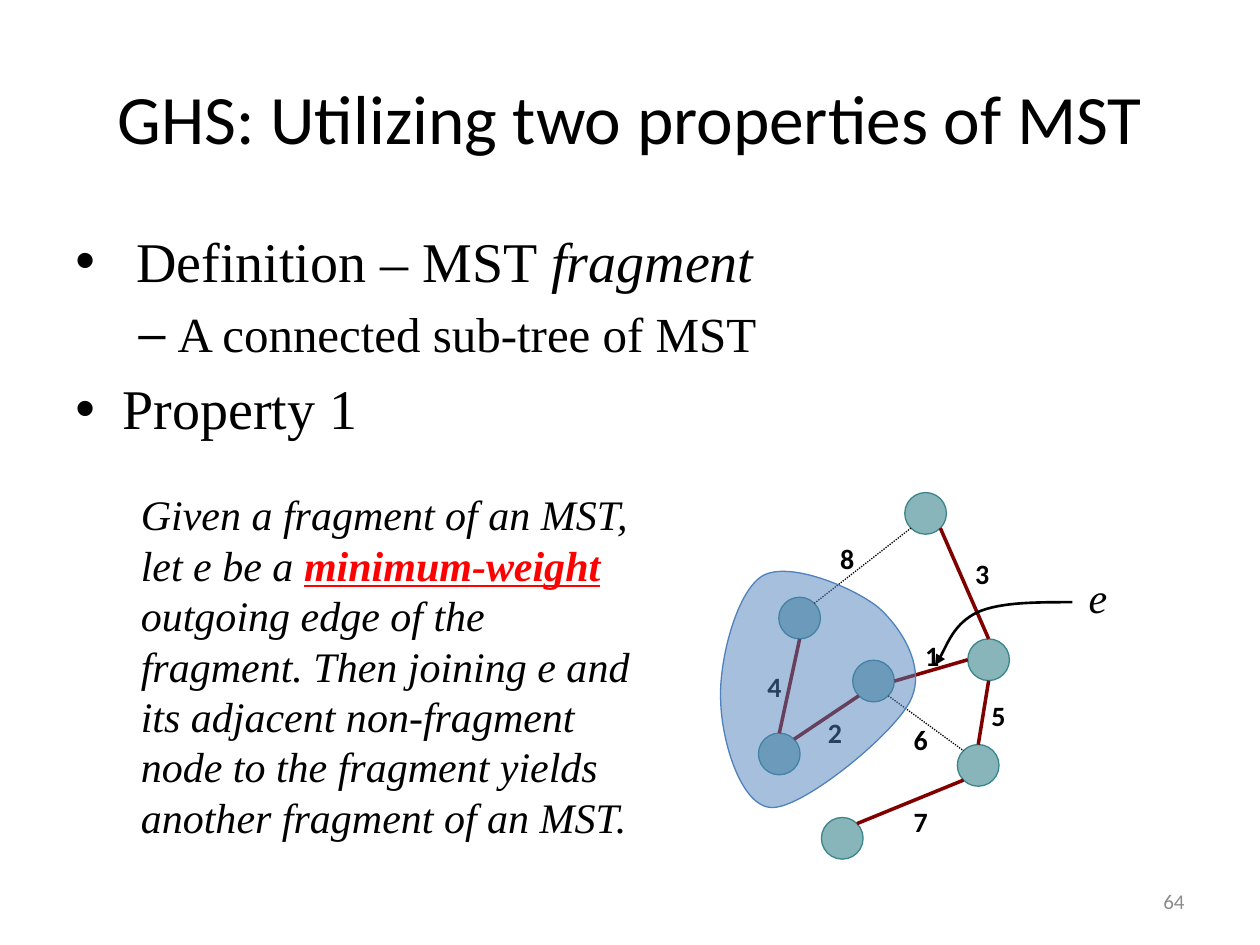
"""Build the slide on minimum spanning tree fragments and their first property."""
from math import cos, radians, sin

from lxml.etree import SubElement
from pptx import Presentation
from pptx.dml.color import RGBColor
from pptx.enum.dml import MSO_LINE
from pptx.enum.shapes import MSO_CONNECTOR, MSO_SHAPE
from pptx.enum.text import MSO_ANCHOR as ANCHOR, PP_ALIGN as ALIGN
from pptx.oxml.ns import qn
from pptx.util import Cm, Pt

rgb = RGBColor.from_string
SERIF, SANS = "Times New Roman", "Calibri"

deck = Presentation()
deck.slide_width, deck.slide_height = Cm(25.4), Cm(19.05)
slide = deck.slides.add_slide(deck.slide_layouts[5])
shapes = slide.shapes


def write(frame, runs, size, font, color="000000", align=ALIGN.LEFT, new=False):
    paragraph = frame.add_paragraph() if new else frame.paragraphs[0]
    paragraph.alignment = align
    paragraph.font.size, paragraph.font.name = Pt(size), font
    paragraph.font.color.rgb = rgb(color)
    for words in runs:
        paragraph.add_run().text = words
    return paragraph


def add_curve(points, closed):
    (left, top), *rest = [(Cm(x), Cm(y)) for x, y in points]
    builder = shapes.build_freeform(left, top)
    builder.add_line_segments(rest, close=closed)
    curve = builder.convert_to_shape()
    curve.shadow.inherit = False
    steps = list(curve._element.iter(qn("a:lnTo")))
    for first, second, third in zip(steps[::3], steps[1::3], steps[2::3]):
        bezier = SubElement(first.getparent(), qn("a:cubicBezTo"))
        first.addprevious(bezier)
        for step in (first, second, third):
            bezier.append(step[0])
            step.getparent().remove(step)
    return curve


title = shapes.title
title.left, title.top, title.width, title.height = Cm(1.27), Cm(0.76), Cm(22.86), Cm(3.18)
title.text_frame.vertical_anchor = ANCHOR.MIDDLE
write(title.text_frame, ["GHS: Utilizing two properties of MST"], 39.6, SANS, align=ALIGN.CENTER)

outline_text = shapes.add_textbox(Cm(1.27), Cm(4.45), Cm(22.86), Cm(12.57)).text_frame
outline_text.word_wrap = True
points = [
    ([" Definition – MST ", "fragment"], 0, 32, "•", 0.95, 0.95),
    (["A connected sub-tree of MST"], 1, 28, "–", 2.06, 0.79),
    (["Property 1"], 0, 32, "•", 0.95, 0.95),
]
for number, (runs, level, size, bullet, margin, hang) in enumerate(points):
    point = write(outline_text, runs, size, SERIF, new=number > 0)
    point.level, point.space_before = level, Pt(size * 0.2)
    properties = point._p.get_or_add_pPr()
    properties.set("marL", str(Cm(margin)))
    properties.set("indent", str(-Cm(hang)))
    bullet_font = SubElement(properties, qn("a:buFont"), typeface="Arial")
    bullet_char = SubElement(properties, qn("a:buChar"), char=bullet)
    properties.find(qn("a:defRPr")).addprevious(bullet_font)
    properties.find(qn("a:defRPr")).addprevious(bullet_char)
outline_text.paragraphs[0].runs[1].font.italic = True

property_text = shapes.add_textbox(Cm(2.59), Cm(9.73), Cm(10.92), Cm(7.44)).text_frame
property_text.word_wrap, property_text.margin_right = True, Cm(0.6)
statement = write(property_text, [
    "Given a fragment of an MST, let e be a ", "minimum-weight",
    " outgoing edge of the fragment. Then joining e and its adjacent non-fragment node "
    "to the fragment yields another fragment of an MST."], 24, SERIF)
statement.font.italic = True
emphasis = statement.runs[1].font
emphasis.bold = emphasis.underline = True
emphasis.color.rgb = rgb("FF0000")

RADIUS = 0.42
nodes = {
    "hub": (17.61, 13.73), "top": (18.66, 10.35), "low": (19.72, 15.43),
    "right": (19.93, 13.3), "bottom": (16.98, 16.9),
    "upper left": (16.12, 12.46), "lower left": (15.71, 15.2),
}
for x, y in nodes.values():
    node = shapes.add_shape(MSO_SHAPE.OVAL, Cm(x - RADIUS), Cm(y - RADIUS),
                            Cm(2 * RADIUS), Cm(2 * RADIUS))
    node.shadow.inherit = False
    node.fill.solid()
    node.fill.fore_color.rgb = node.line.color.rgb = rgb("39858B")
    node.line.width = Pt(0.75)
    SubElement(node.fill._xPr.find(qn("a:solidFill"))[0], qn("a:alpha"), val="60000")

bearings = {"E": 0, "SE": 45, "S": 90, "SW": 135, "W": 180, "NW": 225, "N": 270, "NE": 315}
edges = [
    ("8", "upper left", "NE", "top", "SW", False, 16.76, 10.72),
    ("6", "hub", "SE", "low", "NW", False, 18.24, 14.36),
    ("1", "hub", "E", "right", "W", True, 18.47, 12.67),
    ("3", "right", "N", "top", "SE", True, 19.48, 11.02),
    ("2", "hub", "SW", "lower left", "NE", True, 16.51, 14.22),
    ("5", "low", "N", "right", "S", True, 19.81, 13.89),
    ("7", "low", "SW", "bottom", "NE", True, 18.24, 16.03),
    ("4", "lower left", "N", "upper left", "S", True, 15.29, 13.31),
]
for weight, start, start_side, end, end_side, in_tree, left, top in edges:
    ends = []
    for name, side in ((start, start_side), (end, end_side)):
        angle = radians(bearings[side])
        ends += [Cm(nodes[name][0] + RADIUS * cos(angle)), Cm(nodes[name][1] + RADIUS * sin(angle))]
    edge = shapes.add_connector(MSO_CONNECTOR.STRAIGHT, *ends)
    edge.line.color.rgb = rgb("800000" if in_tree else "000000")
    edge.line.width = Pt(2 if in_tree else 0.75)
    if not in_tree:
        edge.line.dash_style = MSO_LINE.ROUND_DOT
    SubElement(edge._element.spPr, qn("a:effectLst"))
    label = shapes.add_textbox(Cm(left), Cm(top), Cm(0.64), Cm(1.07)).text_frame
    label.word_wrap, label.vertical_anchor = False, ANCHOR.MIDDLE
    label.margin_left = label.margin_right = 0
    write(label, [weight], 16, SANS, align=ALIGN.CENTER).font.bold = True

fragment = add_curve([
    (15.37, 11.61), (15.9, 11.3), (17.2, 11.84), (17.7, 12.24),
    (18.19, 12.67), (18.69, 13.49), (18.34, 14.15),
    (17.98, 14.83), (16.21, 16.28), (15.57, 16.28),
    (14.94, 16.28), (14.55, 14.94), (14.53, 14.15),
    (14.48, 13.39), (14.83, 11.94), (15.37, 11.61)], True)
fragment.fill.solid()
fragment.fill.fore_color.rgb = fragment.line.color.rgb = rgb("4F81BD")
fragment.line.width = Pt(0.75)
SubElement(fragment.fill._xPr.find(qn("a:solidFill"))[0], qn("a:alpha"), val="50000")

edge_name = shapes.add_textbox(Cm(21.6), Cm(11.49), Cm(1.07), Cm(1.07)).text_frame
edge_name.word_wrap, edge_name.vertical_anchor = False, ANCHOR.MIDDLE
write(edge_name, ["e"], 24, SERIF, align=ALIGN.CENTER).font.italic = True

pointer = add_curve([
    (21.62, 12.14), (20.88, 12.14), (20.17, 12.14), (19.71, 12.34),
    (19.23, 12.57), (19, 13.23), (18.85, 13.41)], False)
pointer.fill.background()
pointer.line.color.rgb = rgb("000000")
pointer.line.width = Pt(1.5)
SubElement(pointer.line._get_or_add_ln(), qn("a:tailEnd"), type="triangle")

page_number = shapes.add_textbox(Cm(18.21), Cm(17.65), Cm(5.92), Cm(1.02)).text_frame
page_number.word_wrap, page_number.vertical_anchor = True, ANCHOR.MIDDLE
write(page_number, ["64"], 12, SANS, "8C8C8C", ALIGN.RIGHT)

deck.save("out.pptx")
